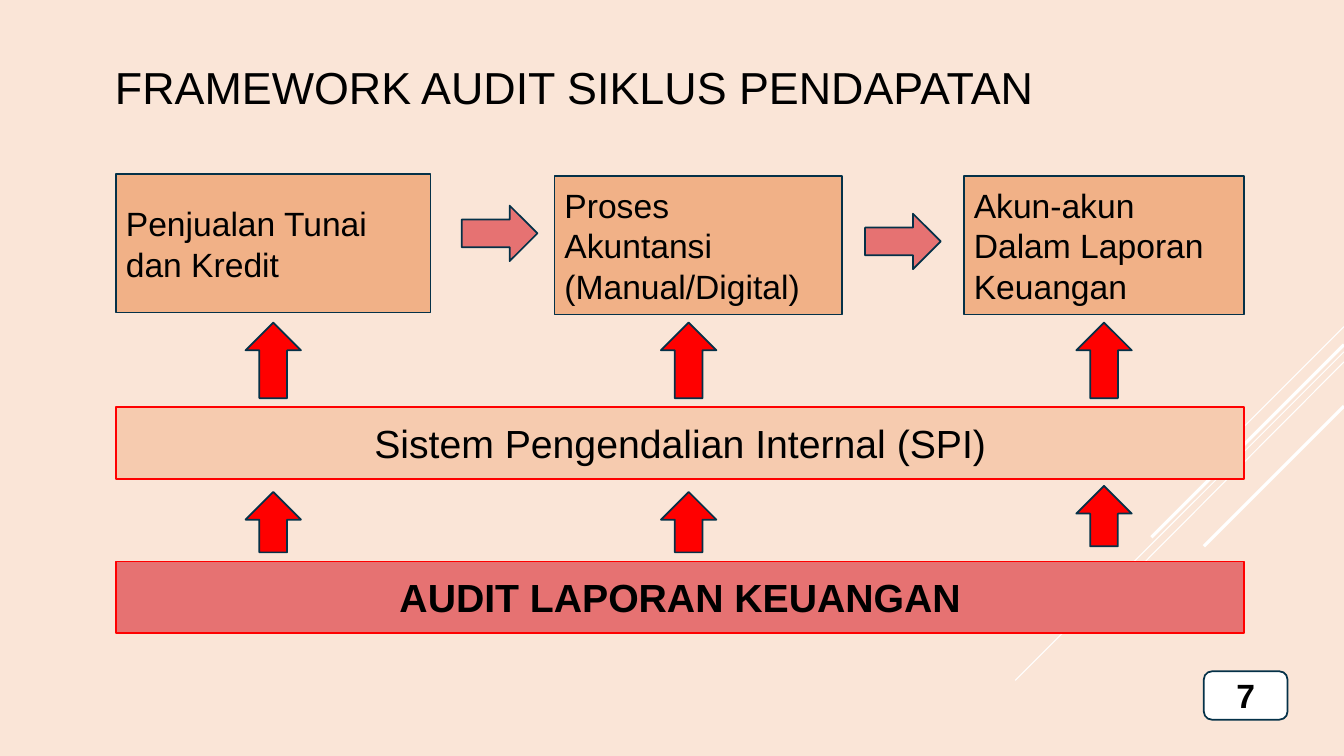
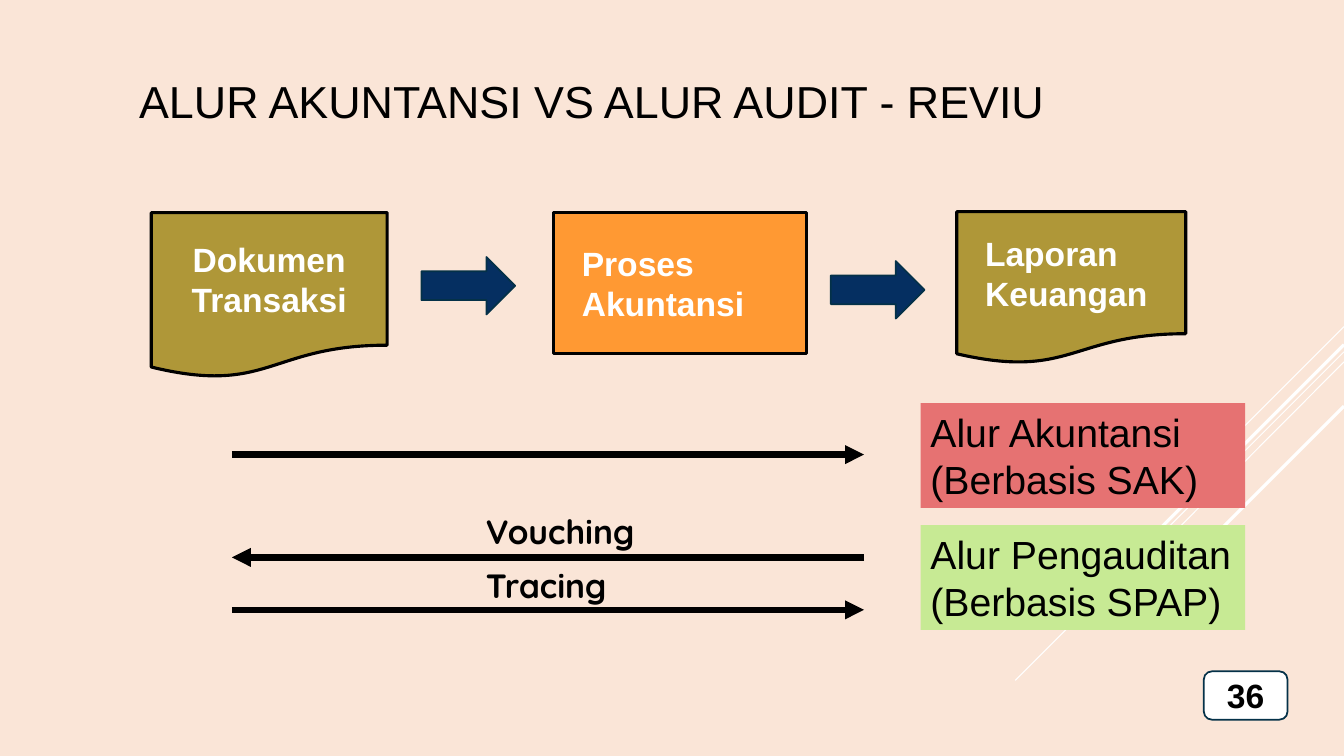
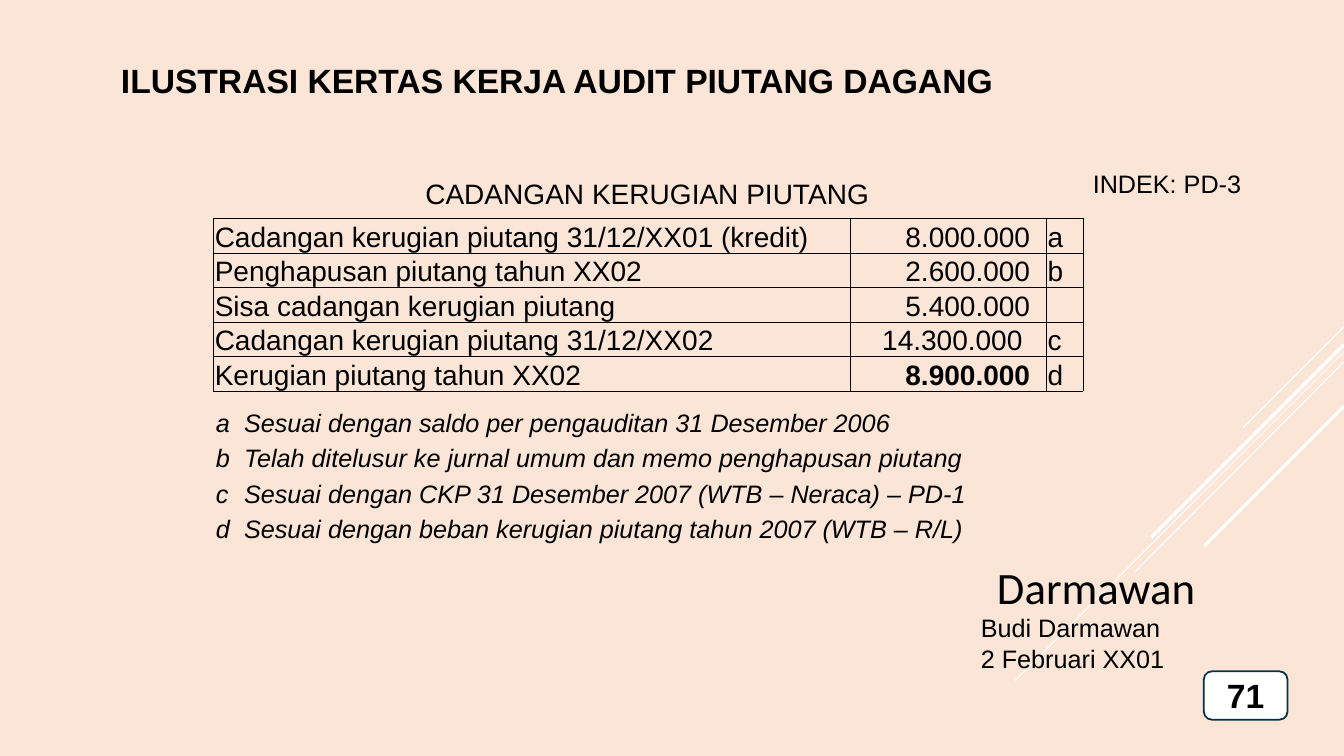
import lxml.etree
import pptx
import pptx.dml.color
import pptx.enum.shapes
import pptx.enum.text
import pptx.oxml.ns
import pptx.util

Inches = pptx.util.Inches
SHAPE = pptx.enum.shapes.MSO_SHAPE
ALIGN = pptx.enum.text.PP_ALIGN
ANCHOR = pptx.enum.text.MSO_ANCHOR
qn = pptx.oxml.ns.qn

PAPER, WHITE, BLACK = "FAE5D7", "FFFFFF", "000000"
OUTLINE, RED, CORAL = "043148", "FF0000", "E67272"
APRICOT, PEACH, ORANGE = "F1B187", "F6CBAF", "FF9933"
OLIVE, NAVY, GREEN = "AF9738", "052F61", "C7EA94"
FONT = "Arial"
TITLE_ONLY, TITLE_AND_BODY = 5, 1

RAYS = [
    ((13.33, 3.24), (12.33, 4.24), 0.75),
    ((13.33, 3.49), (10.07, 6.75), 0.75),
    ((13.33, 3.59), (11.26, 5.67), 0.75),
    ((13.33, 3.42), (11.42, 5.33), 2.25),
    ((13.33, 4.03), (11.94, 5.42), 2.25),
]


def color(value):
    return pptx.dml.color.RGBColor.from_string(value)


def lengths(values):
    return [Inches(value) for value in values]


def place(shape, box):
    shape.left, shape.top, shape.width, shape.height = lengths(box)


def write_text(frame, text, size=24, font=FONT, ink=BLACK, bold=False,
               italic=False, align=ALIGN.LEFT, anchor=ANCHOR.TOP, indent=0.1):
    frame.word_wrap = True
    frame.auto_size = pptx.enum.text.MSO_AUTO_SIZE.NONE
    frame.vertical_anchor = anchor
    frame.margin_left = Inches(indent)
    for index, line in enumerate(text.split("\n")):
        paragraph = frame.add_paragraph() if index else frame.paragraphs[0]
        paragraph.alignment = align
        run = paragraph.add_run()
        run.text = line
        run.font.size = pptx.util.Pt(size)
        run.font.name = font
        run.font.bold = bold
        run.font.italic = italic
        run.font.color.rgb = color(ink)


def add_label(slide, box, text, **text_format):
    label = slide.shapes.add_textbox(*lengths(box))
    write_text(label.text_frame, text, **text_format)


def add_block(slide, kind, box, fill, line=OUTLINE, width=1.25, text=None, **text_format):
    shape = slide.shapes.add_shape(kind, *lengths(box))
    shape.shadow.inherit = False
    shape.fill.solid()
    shape.fill.fore_color.rgb = color(fill)
    if line:
        shape.line.color.rgb = color(line)
        shape.line.width = pptx.util.Pt(width)
    else:
        shape.line.fill.background()
    if text:
        write_text(shape.text_frame, text, **{"anchor": ANCHOR.MIDDLE, **text_format})
    return shape


def add_line(slide, start, end, ink, width, arrow=False):
    connector = slide.shapes.add_connector(
        pptx.enum.shapes.MSO_CONNECTOR.STRAIGHT, *lengths(start + end))
    connector.line.color.rgb = color(ink)
    connector.line.width = pptx.util.Pt(width)
    if arrow:
        lxml.etree.SubElement(connector.get_or_add_ln(), qn("a:tailEnd"), type="triangle")
    lxml.etree.SubElement(connector.element.spPr, qn("a:effectLst"))


def start_slide(presentation, layout, number, title, box, **title_format):
    slide = presentation.slides.add_slide(presentation.slide_layouts[layout])
    place(slide.shapes.title, box)
    write_text(slide.shapes.title.text_frame, title, **title_format)
    for start, end, width in RAYS:
        add_line(slide, start, end, WHITE, width)
    add_block(slide, SHAPE.ROUNDED_RECTANGLE, (11.94, 6.66, 0.83, 0.48), WHITE,
              text=number, bold=True, align=ALIGN.CENTER)
    return slide


def add_process_row(slide, box):
    left, top, width, height = box
    steps = [
        (0, 0, 3.12, "Penjualan Tunai\ndan Kredit"),
        (4.35, 0.02, 2.85, "Proses\nAkuntansi\n(Manual/Digital)"),
        (8.41, 0.02, width - 8.41, "Akun-akun\nDalam Laporan Keuangan"),
    ]
    for x, y, step_width, text in steps:
        add_block(slide, SHAPE.RECTANGLE, (left + x, top + y, step_width, height),
                  APRICOT, text=text)
    for x, y in ((3.43, 0.31), (7.43, 0.39)):
        add_block(slide, SHAPE.RIGHT_ARROW, (left + x, top + y, 0.75, 0.55), CORAL)


def add_support_band(slide, box, fill, text, bold, arrow_length, lifts):
    left, top, width, height = box
    add_block(slide, SHAPE.RECTANGLE, box, fill, line=RED, text=text,
              size=28, bold=bold, align=ALIGN.CENTER)
    for column, lift in enumerate(lifts):
        center_x = left + 1.56 + 4.12 * column
        center_y = top - 0.09 - lift - arrow_length / 2
        arrow = add_block(
            slide, SHAPE.RIGHT_ARROW,
            (center_x - arrow_length / 2, center_y - 0.275, arrow_length, 0.55), RED)
        arrow.rotation = 270


def add_document_row(slide, box):
    left, top, width, height = box
    steps = [
        (SHAPE.FLOWCHART_DOCUMENT, 0, 0, 2.34, height, OLIVE,
         "Dokumen\nTransaksi", ALIGN.CENTER, 0.1),
        (SHAPE.FLOWCHART_PROCESS, 3.99, 0, 2.51, 1.4, ORANGE,
         "Proses\nAkuntansi", ALIGN.LEFT, 0.28),
        (SHAPE.FLOWCHART_DOCUMENT, 7.99, -0.01, width - 7.99, 1.51, OLIVE,
         "Laporan\nKeuangan", ALIGN.LEFT, 0.28),
    ]
    for kind, x, y, step_width, step_height, fill, text, align, indent in steps:
        add_block(slide, kind, (left + x, top + y, step_width, step_height), fill,
                  line=BLACK, width=2.25, text=text, ink=WHITE, bold=True,
                  align=align, indent=indent)
    for x, y in ((2.68, 0.44), (6.74, 0.48)):
        add_block(slide, SHAPE.RIGHT_ARROW, (left + x, top + y, 0.93, 0.57), NAVY)


def add_direction_lines(slide, box):
    left, top, width, height = box
    right = left + width
    for y, start, end in ((0, left, right), (1.02, right, left), (height, left, right)):
        add_line(slide, (start, top + y), (end, top + y), BLACK, 4.5, arrow=True)
    for y, text in ((0.51, "Vouching"), (1.05, "Tracing")):
        add_label(slide, (left + 2.42, top + y, 1.78, 0.5), text,
                  font="Quicksand", bold=True)


def add_legend(slide, box):
    left, top, width, height = box
    entries = [(CORAL, "Alur Akuntansi\n(Berbasis SAK)"),
               (GREEN, "Alur Pengauditan\n(Berbasis SPAP)")]
    for index, (fill, text) in enumerate(entries):
        add_block(slide, SHAPE.RECTANGLE,
                  (left, top + index * (height - 1.04), width, 1.04), fill,
                  line=None, text=text, size=28, anchor=ANCHOR.TOP)


def format_cell(cell):
    cell.margin_left = cell.margin_right = cell.margin_top = Inches(0.01)
    cell.margin_bottom = 0
    cell.vertical_anchor = ANCHOR.BOTTOM
    properties = cell._tc.get_or_add_tcPr()
    for side in ("a:lnL", "a:lnR", "a:lnT", "a:lnB"):
        border = lxml.etree.SubElement(properties, qn(side), w=str(pptx.util.Pt(0.5)))
        fill = lxml.etree.SubElement(border, qn("a:solidFill"))
        lxml.etree.SubElement(fill, qn("a:srgbClr"), val=BLACK)
    cell.fill.background()


def write_cell(cell, text, bold=False, indent=0.01):
    format_cell(cell)
    cell.margin_left = Inches(indent)
    if text:
        run = cell.text_frame.paragraphs[0].add_run()
        run.text = text
        run.font.size = pptx.util.Pt(20)
        run.font.name = FONT
        run.font.bold = bold
        run.font.color.rgb = color(BLACK)


def add_allowance_table(slide, box):
    rows = [
        ("Cadangan kerugian piutang 31/12/XX01 (kredit)", "8.000.000", "a"),
        ("Penghapusan piutang tahun XX02", "2.600.000", "b"),
        ("Sisa cadangan kerugian piutang", "5.400.000", ""),
        ("Cadangan kerugian piutang 31/12/XX02", "14.300.000", "c"),
        ("Kerugian piutang tahun XX02", "8.900.000", "d"),
    ]
    table = slide.shapes.add_table(len(rows), 3, *lengths(box)).table
    table.first_row = table.horz_banding = False
    for column, width in zip(table.columns, (6.31, 1.95, 0.36)):
        column.width = Inches(width)
    for index, (name, amount, mark) in enumerate(rows):
        write_cell(table.cell(index, 0), name)
        write_cell(table.cell(index, 1), amount, bold=index == len(rows) - 1,
                   indent=0.32 if len(amount) > 9 else 0.55)
        write_cell(table.cell(index, 2), mark)


def add_notes_list(slide, box):
    notes = [
        "a\tSesuai dengan saldo per pengauditan 31 Desember 2006",
        "b\tTelah ditelusur ke jurnal umum dan memo penghapusan piutang",
        "c\tSesuai dengan CKP 31 Desember 2007 (WTB – Neraca) – PD-1",
        "d\tSesuai dengan beban kerugian piutang tahun 2007 (WTB – R/L)",
    ]
    body = slide.placeholders[1]
    place(body, box)
    write_text(body.text_frame, "\n".join(notes), size=18, italic=True)
    hanging = Inches(0.28)
    for paragraph in body.text_frame.paragraphs:
        properties = paragraph._p.get_or_add_pPr()
        properties.set("marL", str(hanging))
        properties.set("indent", str(-hanging))
        lxml.etree.SubElement(properties, qn("a:buNone"))


def add_signature(slide, box):
    left, top, width, height = box
    add_label(slide, (left, top + 0.53, width, height - 0.53),
              "Budi Darmawan\n2 Februari XX01", size=18)
    add_label(slide, (left + 0.16, top, 2.23, 0.63), "Darmawan", size=32, font="Calibri")


def build_framework_slide(presentation):
    slide = start_slide(presentation, TITLE_ONLY, "7", "FRAMEWORK AUDIT SIKLUS PENDAPATAN",
                        (1.04, 0.54, 10.45, 0.64), size=32)
    add_support_band(slide, (1.15, 4.04, 11.19, 0.71), PEACH,
                     "Sistem Pengendalian Internal (SPI)", False, 0.75, (0, 0, 0))
    add_support_band(slide, (1.15, 5.57, 11.19, 0.71), CORAL,
                     "AUDIT LAPORAN KEUANGAN", True, 0.6, (0, 0, 0.06))
    add_process_row(slide, (1.15, 1.73, 11.19, 1.37))


def build_flow_slide(presentation):
    slide = start_slide(presentation, TITLE_ONLY, "36", "ALUR AKUNTANSI VS ALUR AUDIT - REVIU",
                        (1.28, 0.68, 10.92, 0.64), size=32)
    add_document_row(slide, (1.5, 2.11, 10.26, 1.64))
    add_direction_lines(slide, (2.3, 4.51, 6.27, 1.54))
    add_legend(slide, (9.13, 4, 3.22, 2.25))


def build_working_paper_slide(presentation):
    slide = start_slide(presentation, TITLE_AND_BODY, "71",
                        "ILUSTRASI KERTAS KERJA AUDIT PIUTANG DAGANG",
                        (1.1, 0.54, 9.02, 0.5), bold=True)
    add_label(slide, (10.74, 1.62, 1.73, 0.4), "INDEK: PD-3", size=18)
    add_label(slide, (4.12, 1.7, 5.73, 0.43), "CADANGAN KERUGIAN PIUTANG", size=20)
    add_allowance_table(slide, (2.12, 2.17, 8.62, 1.71))
    add_notes_list(slide, (2.04, 3.99, 8.08, 1.48))
    add_signature(slide, (9.63, 5.5, 2.54, 1.23))


def main():
    presentation = pptx.Presentation()
    presentation.slide_width = Inches(13.33)
    presentation.slide_height = Inches(7.5)
    background = presentation.slide_master.background.fill
    background.solid()
    background.fore_color.rgb = color(PAPER)
    build_framework_slide(presentation)
    build_flow_slide(presentation)
    build_working_paper_slide(presentation)
    presentation.save("out.pptx")


if __name__ == "__main__":
    main()
